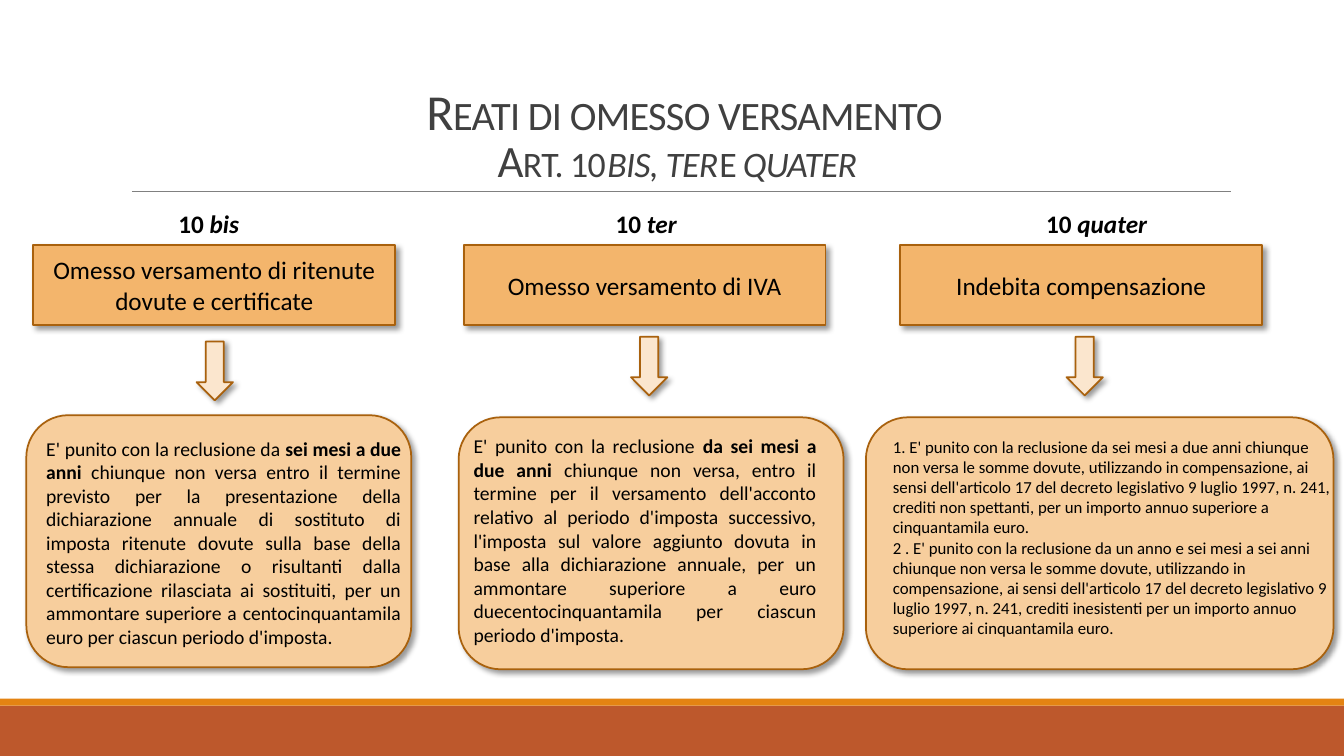
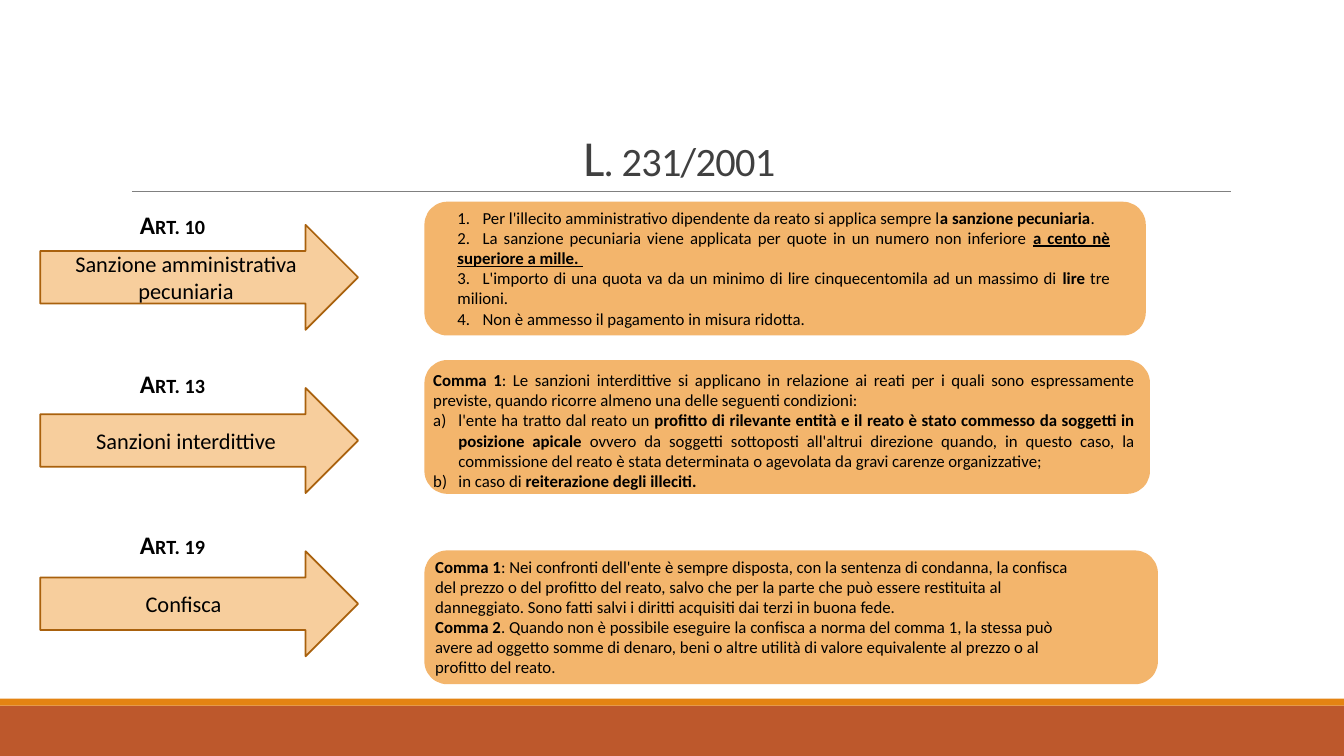
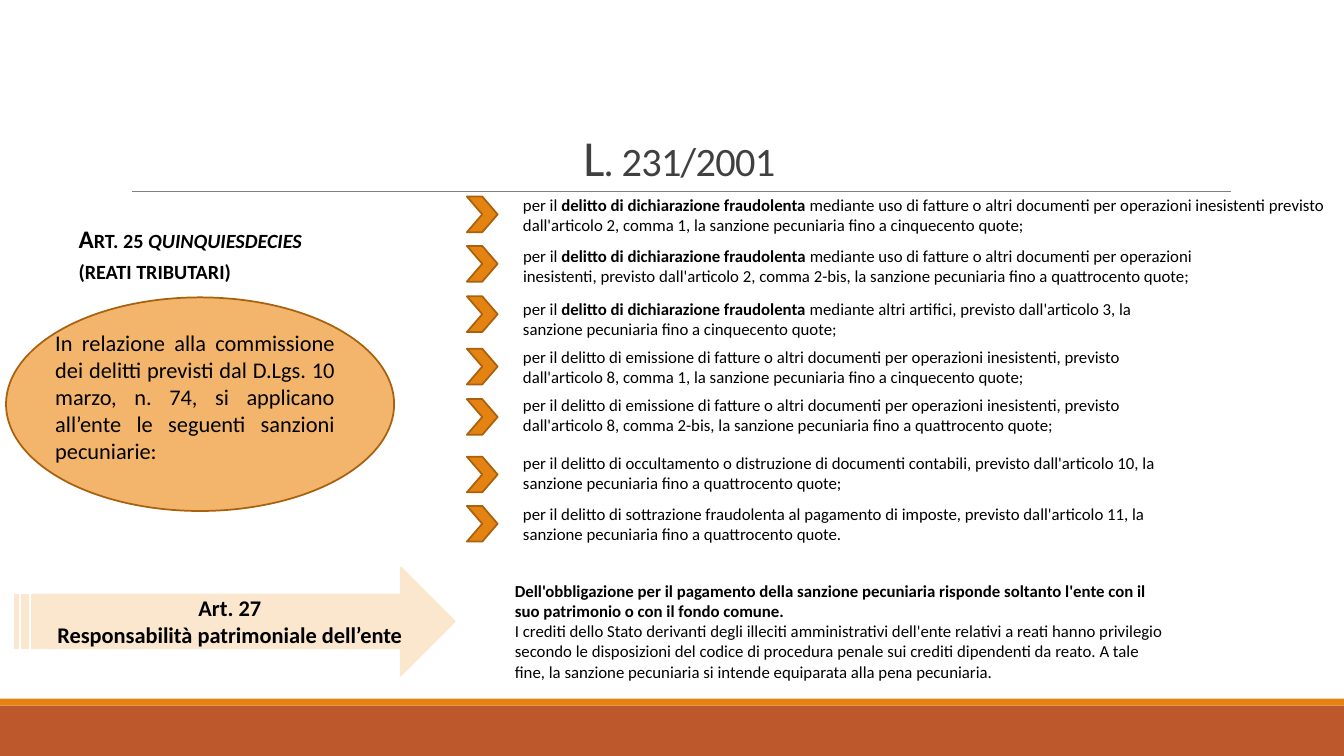
from dataclasses import dataclass

from pptx import Presentation
from pptx.dml.color import RGBColor
from pptx.enum.shapes import MSO_CONNECTOR as Connector, MSO_SHAPE as Preset
from pptx.enum.text import MSO_ANCHOR as Anchor, PP_ALIGN as Align
from pptx.oxml import parse_xml
from pptx.oxml.ns import nsdecls, qn
from pptx.util import Pt


@dataclass(frozen=True)
class Theme:
    font: str = "Calibri"
    black: str = "000000"
    title_ink: str = "404040"
    rule: str = "808080"
    rust: str = "BD582C"
    orange: str = "E48312"
    strong: str = "F3B56C"
    medium: str = "F7CE9D"
    pale: str = "FBE6CE"
    outline: str = "A9610D"
    title: int = 36
    subtitle: int = 32
    heading: int = 18
    label: int = 16
    body: int = 14
    small: int = 12
    border: float = 1.25


THEME = Theme()


@dataclass(frozen=True)
class Box:
    left: float
    top: float
    width: float
    height: float

    def place(self, dx, dy, width, height):
        """A box placed from this box's top left corner."""
        return Box(self.left + dx, self.top + dy, width, height)

    def lengths(self):
        return Pt(self.left), Pt(self.top), Pt(self.width), Pt(self.height)


def rgb(colour):
    return RGBColor.from_string(colour)


def write(frame, paragraphs, size, align=Align.LEFT, colour=THEME.black, flags="", spacing=None):
    """Each paragraph is a string or a list of strings and (text, flags) pairs.

    Flags: b bold, i italic, u underlined, s small capitals.
    """
    for index, pieces in enumerate(paragraphs):
        paragraph = frame.paragraphs[0] if index == 0 else frame.add_paragraph()
        paragraph.alignment = align
        for piece in [pieces] if isinstance(pieces, str) else pieces:
            text, own_flags = (piece, "") if isinstance(piece, str) else piece
            active = flags + own_flags
            run = paragraph.add_run()
            run.text = text
            font = run.font
            font.name, font.size = THEME.font, Pt(size)
            font.color.rgb = rgb(colour)
            font.bold, font.italic, font.underline = (flag in active for flag in "biu")
            properties = run._r.get_or_add_rPr()
            if "s" in active:
                properties.set("cap", "small")
            if spacing:
                properties.set("spc", str(int(spacing * 100)))
    return frame.paragraphs


def add_text(slide, box, paragraphs, size, wrap=True, **style):
    frame = slide.shapes.add_textbox(*box.lengths()).text_frame
    frame.word_wrap = wrap
    return write(frame, paragraphs, size, **style)


def add_shape(slide, preset, box, fill, line=THEME.outline, shadow=False):
    shape = slide.shapes.add_shape(preset, *box.lengths())
    shape.fill.solid()
    shape.fill.fore_color.rgb = rgb(fill)
    if line:
        shape.line.color.rgb = rgb(line)
        shape.line.width = Pt(THEME.border)
    else:
        shape.line.fill.background()
    shape.shadow.inherit = False
    if shadow:
        shape._element.spPr.find(qn("a:effectLst")).append(parse_xml(
            f'<a:outerShdw {nsdecls("a")} blurRad="{Pt(4)}" dist="{Pt(3)}" dir="2700000" '
            f'algn="tl" rotWithShape="0"><a:srgbClr val="{THEME.black}">'
            '<a:alpha val="40000"/></a:srgbClr></a:outerShdw>'))
    return shape


def label_shape(shape, paragraphs, size, flags=""):
    frame = shape.text_frame
    frame.word_wrap = True
    frame.vertical_anchor = Anchor.MIDDLE
    write(frame, paragraphs, size, align=Align.CENTER, flags=flags)


def tab_numbers(paragraphs):
    for paragraph in paragraphs:
        paragraph._p.get_or_add_pPr().append(parse_xml(
            f'<a:tabLst {nsdecls("a")}><a:tab pos="{Pt(18)}" algn="l"/></a:tabLst>'))


def letter_items(paragraphs):
    """Letters every paragraph after the introduction."""
    for paragraph in paragraphs[1:]:
        properties = paragraph._p.get_or_add_pPr()
        properties.set("marL", str(Pt(18)))
        properties.set("indent", str(-Pt(18)))
        properties.append(parse_xml(f'<a:buAutoNum {nsdecls("a")} type="alphaLcParenR"/>'))


def add_base(presentation, heading, subtitle=None):
    """A blank slide with the bottom bands, the rule and the title."""
    slide = presentation.slides.add_slide(presentation.slide_layouts[6])
    add_shape(slide, Preset.RECTANGLE, Box(0, 504, 960, 36), THEME.rust, line=None)
    add_shape(slide, Preset.RECTANGLE, Box(0, 499, 960, 5), THEME.orange, line=None)
    rule = slide.shapes.add_connector(Connector.STRAIGHT, Pt(94.3), Pt(136.8), Pt(879), Pt(136.8))
    rule.line.color.rgb = rgb(THEME.rule)
    rule.line.width = Pt(0.5)
    rule._element.spPr.append(parse_xml(f'<a:effectLst {nsdecls("a")}/>'))

    lines = [heading, subtitle] if subtitle else [heading]
    frame = slide.shapes.add_textbox(*Box(86.4, 22.3, 792, 114.5).lengths()).text_frame
    frame.word_wrap = True
    frame.vertical_anchor = Anchor.BOTTOM
    paragraphs = write(frame, lines, THEME.title, align=Align.CENTER,
                       colour=THEME.title_ink, flags="s", spacing=-0.5)
    for paragraph in paragraphs:
        paragraph.line_spacing = 0.85
    for paragraph in paragraphs[1:]:
        for run in paragraph.runs:
            run.font.size = Pt(THEME.subtitle)
    return slide


@dataclass(frozen=True)
class Offence:
    article: str
    name: str
    left: float
    article_dx: float
    arrow: tuple
    panel: tuple
    text: tuple
    penalty: list
    size: int = THEME.body
    align: Align = Align.JUSTIFY


OFFENCES = [
    Offence("bis", "Omesso versamento di ritenute dovute e certificate", 23.8,
            96.5, (116.6, 69), (-5, 121.6, 275), (2.1, 133.2, 267.8), [[
                "E' punito con la reclusione da ", ("sei mesi a due anni ", "b"),
                "chiunque non versa entro il termine previsto per la presentazione della "
                "dichiarazione annuale di sostituto di imposta ritenute dovute sulla base della "
                "stessa dichiarazione o risultanti dalla certificazione rilasciata ai sostituiti, "
                "per un ammontare superiore a centocinquantamila euro per ciascun periodo "
                "d'imposta."]]),
    Offence("ter", "Omesso versamento di IVA", 331.2,
            101.5, (119.5, 65.5), (-3.6, 123.1, 275), (0, 131.7, 259.2), [[
                "E' punito con la reclusione ", ("da sei mesi a due anni ", "b"),
                "chiunque non versa, entro il termine per il versamento dell'acconto relativo al "
                "periodo d'imposta successivo, l'imposta sul valore aggiunto dovuta in base alla "
                "dichiarazione annuale, per un ammontare superiore a euro "
                "duecentocinquantamila per ciascun periodo d'imposta."]]),
    Offence("quater", "Indebita compensazione", 643,
            97.2, (118.8, 65.5), (-24.5, 123.1, 334), (-12.3, 133.2, 328.3), [
                "1. E' punito con la reclusione da sei mesi a due anni chiunque non versa le somme "
                "dovute, utilizzando in compensazione, ai sensi dell'articolo 17 del decreto "
                "legislativo 9 luglio 1997, n. 241, crediti non spettanti, per un importo annuo "
                "superiore a cinquantamila euro.",
                "2 . E' punito con la reclusione da un anno e sei mesi a sei anni",
                "chiunque non versa le somme dovute, utilizzando in",
                "compensazione, ai sensi dell'articolo 17 del decreto legislativo 9",
                "luglio 1997, n. 241, crediti inesistenti per un importo annuo",
                "superiore ai cinquantamila euro."],
            size=THEME.small, align=Align.LEFT),
]


def add_offence(slide, box, offence):
    """One column: article, offence, arrow and penalty, placed from the offence box."""
    head = add_shape(slide, Preset.RECTANGLE, box, THEME.strong, shadow=True)
    label_shape(head, [offence.name], THEME.heading)
    add_text(slide, box.place(offence.article_dx, -29.5, 95, 29),
             [["10 ", (offence.article, "i")]], THEME.heading, flags="b")
    add_shape(slide, Preset.DOWN_ARROW, box.place(*offence.arrow, 26, 42), THEME.pale, shadow=True)
    add_shape(slide, Preset.ROUNDED_RECTANGLE, box.place(*offence.panel, 180),
              THEME.medium, shadow=True)
    add_text(slide, box.place(*offence.text, 160), offence.penalty, offence.size,
             align=offence.align)


def offences_slide(presentation):
    slide = add_base(presentation, "Reati di omesso versamento",
                     ["Art. 10 ", ("bis, ter ", "i"), "e ", ("quater", "i")])
    for offence in OFFENCES:
        add_offence(slide, Box(offence.left, 175, 258.5, 57), offence)


@dataclass(frozen=True)
class Sanction:
    article: str
    name: str
    article_dy: float
    panel: tuple
    text: tuple
    rules: list
    align: Align = Align.JUSTIFY
    format_list: object = None


SANCTIONS = [
    Sanction("Art. 10", "Sanzione amministrativa pecuniaria", -14.4,
             (-15.9, 514), (290.9, -15.9, 480.2), [
                 ["1.\tPer l'illecito amministrativo dipendente da reato si applica sempre l",
                  ("a sanzione pecuniaria", "b"), "."],
                 ["2.\tLa sanzione pecuniaria viene applicata per quote in un numero non "
                  "inferiore ", ("a cento nè superiore a mille. ", "bu")],
                 ["3.\tL'importo di una quota va da un minimo di lire cinquecentomila ad un "
                  "massimo di ", ("lire", "b"), " tre milioni."],
                 "4.\tNon è ammesso il pagamento in misura ridotta."],
             format_list=tab_numbers),
    Sanction("Art. 13", "Sanzioni interdittive", -18,
             (-19.4, 517), (273.6, -16.6, 515.5), [
                 [("Comma 1", "b"),
                  ": Le sanzioni interdittive si applicano in relazione ai reati per i quali sono "
                  "espressamente previste, quando ricorre almeno una delle seguenti condizioni: "],
                 ["l'ente ha tratto dal reato un ",
                  ("profitto di rilevante entità e il reato è stato commesso da soggetti in "
                   "posizione apicale ", "b"),
                  "ovvero da soggetti sottoposti all'altrui direzione quando, in questo caso, la "
                  "commissione del reato è stata determinata o agevolata da gravi carenze "
                  "organizzative; "],
                 ["in caso di ", ("reiterazione degli illeciti.", "b")]],
             format_list=letter_items),
    Sanction("Art. 19", "Confisca ", -19.4,
             (0, 522.7), (275, 0, 480.2), [
                 [("Comma 1", "b"),
                  ": Nei confronti dell'ente è sempre disposta, con la sentenza di condanna, la "
                  "confisca del prezzo o del profitto del reato, salvo che per la parte che può "
                  "essere restituita al danneggiato. Sono fatti salvi i diritti acquisiti dai terzi "
                  "in buona fede."],
                 [("Comma 2", "b"),
                  ". Quando non è possibile eseguire la confisca a norma del comma 1, la stessa può "
                  "avere ad oggetto somme di denaro, beni o altre utilità di valore equivalente al "
                  "prezzo o al profitto del reato."]],
             align=Align.LEFT),
]


def add_sanction(slide, box, sanction):
    """One row: article, arrow and rules, placed from the arrow box."""
    arrow = add_shape(slide, Preset.RIGHT_ARROW, box, THEME.medium)
    label_shape(arrow, [sanction.name], THEME.label)
    add_text(slide, box.place(64.1, sanction.article_dy, 67, 29), [sanction.article],
             THEME.heading, wrap=False, flags="bs")
    panel_dy, panel_width = sanction.panel
    add_shape(slide, Preset.ROUNDED_RECTANGLE, box.place(275, panel_dy, panel_width, 94.3),
              THEME.strong, line=THEME.strong)
    paragraphs = add_text(slide, box.place(*sanction.text, 94.3), sanction.rules, THEME.small,
                          align=sanction.align)
    if sanction.format_list:
        sanction.format_list(paragraphs)


def sanctions_slide(presentation):
    slide = add_base(presentation, "L. 231/2001")
    for row, sanction in enumerate(SANCTIONS):
        add_sanction(slide, Box(28.8, 160.6 + 116.6 * row, 227, 75), sanction)


FRAUD = ["per il ", ("delitto di dichiarazione fraudolenta ", "b")]
INVOICES = ("per il delitto di emissione di fatture o altri documenti per operazioni inesistenti, "
            "previsto dall'articolo 8, ")

# Text top, text width, chevron offset, wording
TAX_CRIMES = [
    (135.4, 638.6, 5, FRAUD + [
        "mediante uso di fatture o altri documenti per operazioni inesistenti previsto "
        "dall'articolo 2, comma 1, la sanzione pecuniaria fino a cinquecento quote;"]),
    (172.1, 511.9, 3.6, FRAUD + [
        "mediante uso di fatture o altri documenti per operazioni inesistenti, previsto "
        "dall'articolo 2, comma 2-bis, la sanzione pecuniaria fino a quattrocento quote;"]),
    (209.5, 480.2, 2.2, FRAUD + [
        "mediante altri artifici, previsto dall'articolo 3, la sanzione pecuniaria fino a "
        "cinquecento quote;"]),
    (244.1, 480.2, 5, INVOICES + "comma 1, la sanzione pecuniaria fino a cinquecento quote;"),
    (278.6, 480.2, 6.5, INVOICES + "comma 2-bis, la sanzione pecuniaria fino a quattrocento quote;"),
    (319.7, 480.2, 6.5,
     "per il delitto di occultamento o distruzione di documenti contabili, previsto "
     "dall'articolo 10, la sanzione pecuniaria fino a quattrocento quote;"),
    (356.4, 480.2, 5,
     "per il delitto di sottrazione fraudolenta al pagamento di imposte, previsto "
     "dall'articolo 11, la sanzione pecuniaria fino a quattrocento quote."),
]


def add_tax_crime(slide, box, chevron_dy, wording):
    add_shape(slide, Preset.CHEVRON, box.place(-33, chevron_dy, 22, 25.5), THEME.orange)
    add_text(slide, box, [wording], THEME.small)


def add_scope(slide, box):
    """The article and the ellipse that introduces the list of crimes."""
    add_shape(slide, Preset.OVAL, box, THEME.strong)
    add_text(slide, box.place(44.7, -56.2, 182, 51),
             [["Art. 25 ", ("quinquiesdecies", "i")], "(reati tributari)"],
             THEME.heading, wrap=False, flags="bs")
    add_text(slide, box.place(28.1, 19.4, 213.8, 106.5),
             ["In relazione alla commissione dei delitti previsti dal D.Lgs. 10 marzo, n. 74, "
              "si applicano all’ente le seguenti sanzioni pecuniarie:"],
             THEME.label, align=Align.JUSTIFY)


def add_liability(slide, box):
    arrow = add_shape(slide, Preset.STRIPED_RIGHT_ARROW, box, THEME.pale, line=THEME.pale)
    label_shape(arrow, ["Art. 27", "Responsabilità patrimoniale dell’ente"], THEME.label, flags="b")
    add_text(slide, box.place(349.9, 5.8, 480.2, 80), [
        [("Dell'obbligazione per il pagamento della sanzione pecuniaria risponde soltanto l'ente "
          "con il suo patrimonio o con il fondo comune.", "b")],
        "I crediti dello Stato derivanti degli illeciti amministrativi dell'ente relativi a reati "
        "hanno privilegio secondo le disposizioni del codice di procedura penale sui crediti "
        "dipendenti da reato. A tale fine, la sanzione pecuniaria si intende equiparata alla pena "
        "pecuniaria."], THEME.small)


def tax_crimes_slide(presentation):
    slide = add_base(presentation, "L. 231/2001")
    add_scope(slide, Box(4.3, 212.4, 277.2, 152.6))
    for top, width, chevron_dy, wording in TAX_CRIMES:
        add_tax_crime(slide, Box(366.5, top, width, 36), chevron_dy, wording)
    add_liability(slide, Box(10.8, 405.4, 314, 77))


def main():
    presentation = Presentation()
    presentation.slide_width, presentation.slide_height = Pt(960), Pt(540)
    offences_slide(presentation)
    sanctions_slide(presentation)
    tax_crimes_slide(presentation)
    presentation.save("out.pptx")


if __name__ == "__main__":
    main()
